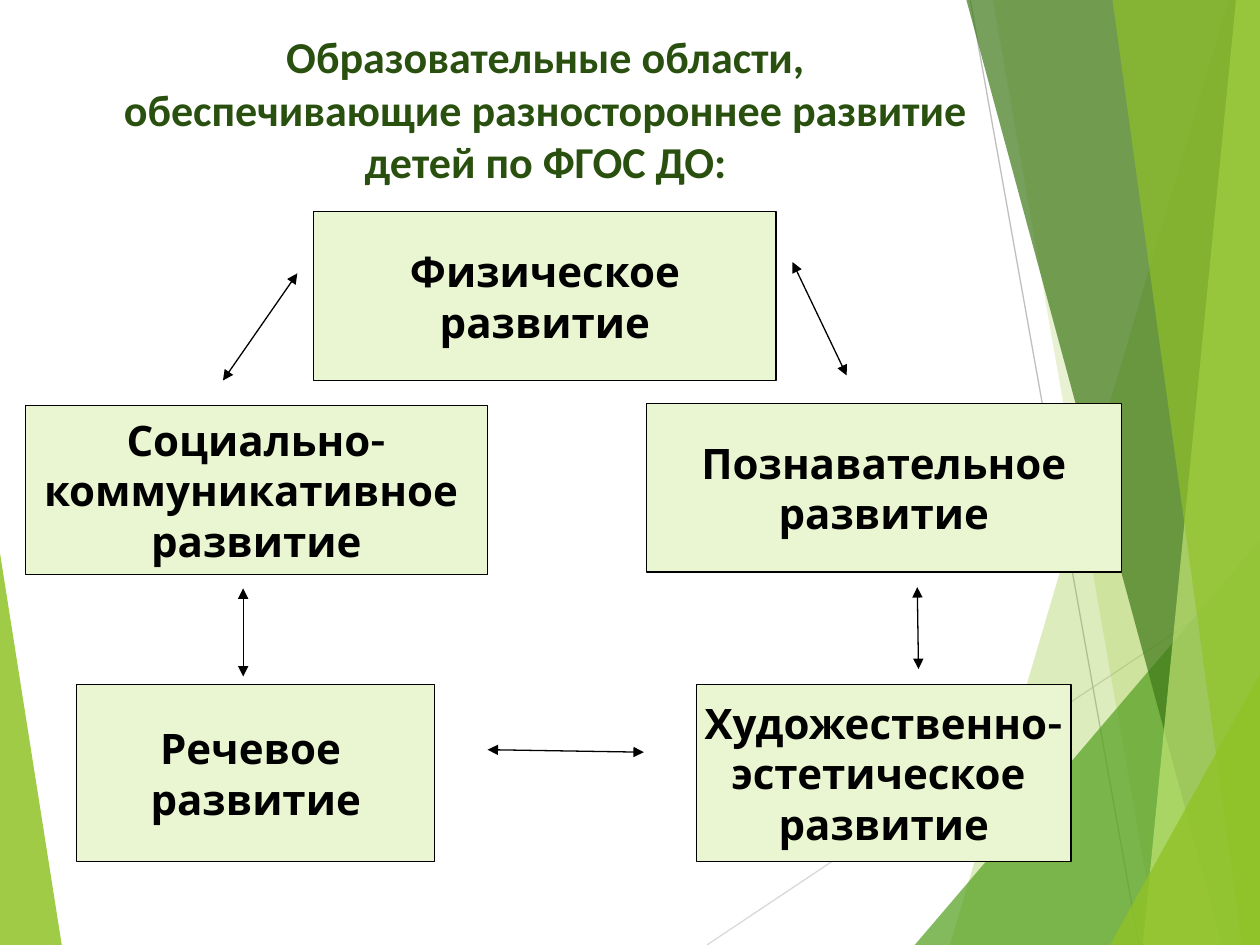
from dataclasses import dataclass

from lxml.etree import SubElement
from pptx import Presentation
from pptx.dml.color import RGBColor
from pptx.enum.shapes import MSO_CONNECTOR, MSO_SHAPE
from pptx.enum.text import MSO_ANCHOR, PP_ALIGN
from pptx.oxml.ns import qn
from pptx.util import Inches, Pt


@dataclass(frozen=True)
class Theme:
    title_font: str = "Calibri"
    body_font: str = "Karla"
    title_size: float = 25.2
    body_size: float = 24
    line_width: float = 0.75
    title: str = "2A5010"
    ink: str = "000000"
    box: str = "EAF6D1"
    green: str = "90C226"
    mid_green: str = "54A021"
    dark_green: str = "3F7819"
    light_green: str = "C0E474"
    pale_line: str = "D9D9D9"
    grey_line: str = "BFBFBF"


class SlideBuilder:
    """Draws styled elements on one slide."""

    def __init__(self, slide, theme):
        self.shapes = slide.shapes
        self.theme = theme

    def set_text(self, tf, text, font, size, color):
        tf.text = text
        tf.vertical_anchor = MSO_ANCHOR.MIDDLE
        for p in tf.paragraphs:
            p.alignment = PP_ALIGN.CENTER
            for r in p.runs:
                r.font.name = font
                r.font.size = Pt(size)
                r.font.bold = True
                r.font.color.rgb = RGBColor.from_string(color)

    def title(self, text, x, y, w, h):
        tf = self.shapes.add_textbox(*map(Inches, (x, y, w, h))).text_frame
        tf.word_wrap = True
        t = self.theme
        self.set_text(tf, text, t.title_font, t.title_size, t.title)

    def box(self, text, x, y, w, h):
        t = self.theme
        sp = self.shapes.add_shape(MSO_SHAPE.RECTANGLE, *map(Inches, (x, y, w, h)))
        sp.shadow.inherit = False
        sp.fill.solid()
        sp.fill.fore_color.rgb = RGBColor.from_string(t.box)
        sp.line.color.rgb = RGBColor.from_string(t.ink)
        sp.line.width = Pt(t.line_width)
        sp.text_frame.word_wrap = False
        self.set_text(sp.text_frame, text, t.body_font, t.body_size, t.ink)

    def facet(self, points, color, alpha):
        pts = [(Inches(x), Inches(y)) for x, y in points]
        fb = self.shapes.build_freeform(*pts[0])
        fb.add_line_segments(pts[1:], close=True)
        sp = fb.convert_to_shape()
        sp.shadow.inherit = False
        sp.line.fill.background()
        sp.fill.solid()
        sp.fill.fore_color.rgb = RGBColor.from_string(color)
        clr = sp._element.spPr.find(qn("a:solidFill"))[0]
        SubElement(clr, qn("a:alpha"), val=str(alpha * 1000))

    def line(self, x1, y1, x2, y2, color):
        cx = self.shapes.add_connector(
            MSO_CONNECTOR.STRAIGHT, *map(Inches, (x1, y1, x2, y2)))
        cx.line.color.rgb = RGBColor.from_string(color)
        cx.line.width = Pt(self.theme.line_width)
        SubElement(cx._element.spPr, qn("a:effectLst"))
        return cx

    def double_arrow(self, x1, y1, x2, y2):
        cx = self.line(x1, y1, x2, y2, self.theme.ink)
        ln = cx._element.spPr.find(qn("a:ln"))
        for end in ("a:headEnd", "a:tailEnd"):
            SubElement(ln, qn(end), type="triangle")


def main():
    prs = Presentation()
    prs.slide_width, prs.slide_height = Inches(10), Inches(7.5)
    t = Theme()
    s = SlideBuilder(prs.slides.add_slide(prs.slide_layouts[6]), t)

    s.facet([(0, 4.39), (0.49, 7.5), (0, 7.5)], t.green, 85)
    s.line(5.61, 7.5, 10, 4.57, t.pale_line)
    s.line(7.7, 0, 9.04, 7.5, t.grey_line)
    facets = [
        (9.75, 7.54, 0, t.green, 30),
        (7.88, 9.19, 0, t.green, 20),
        (10, 7.26, 4.29, t.mid_green, 72),
        (7.67, 9.7, 0, t.dark_green, 70),
        (9.81, 9.07, 0, t.light_green, 70),
        (8.83, 9.86, 0, t.green, 65),
        (10, 8.81, 5.35, t.green, 80),
    ]
    for top_x, bottom_x, top, color, alpha in facets:
        s.facet([(top_x, top), (bottom_x, 7.5), (10, 7.5), (10, top)], color, alpha)

    s.title("Образовательные области, обеспечивающие разностороннее развитие "
            "детей по ФГОС ДО:", 0.86, 0.14, 6.94, 1.44)
    boxes = [
        ("Художественно-\nэстетическое ", 5.53, 5.43, 2.97, 1.41),
        (" Познавательное ", 5.13, 3.2, 3.77, 1.34),
        ("Речевое ", 0.61, 5.43, 2.84, 1.41),
        ("Социально-\nкоммуникативное ", 0.2, 3.22, 3.67, 1.34),
        ("Физическое", 2.49, 1.68, 3.67, 1.34),
    ]
    for area, *place in boxes:
        s.box(area + "\nразвитие", *place)

    arrows = [
        (2.36, 2.17, 1.77, 3.02),
        (6.29, 2.08, 6.72, 2.98),
        (1.93, 4.67, 1.93, 5.37),
        (3.87, 5.95, 5.11, 5.97),
        (7.29, 5.31, 7.28, 4.66),
    ]
    for ends in arrows:
        s.double_arrow(*ends)

    prs.save("out.pptx")


if __name__ == "__main__":
    main()
